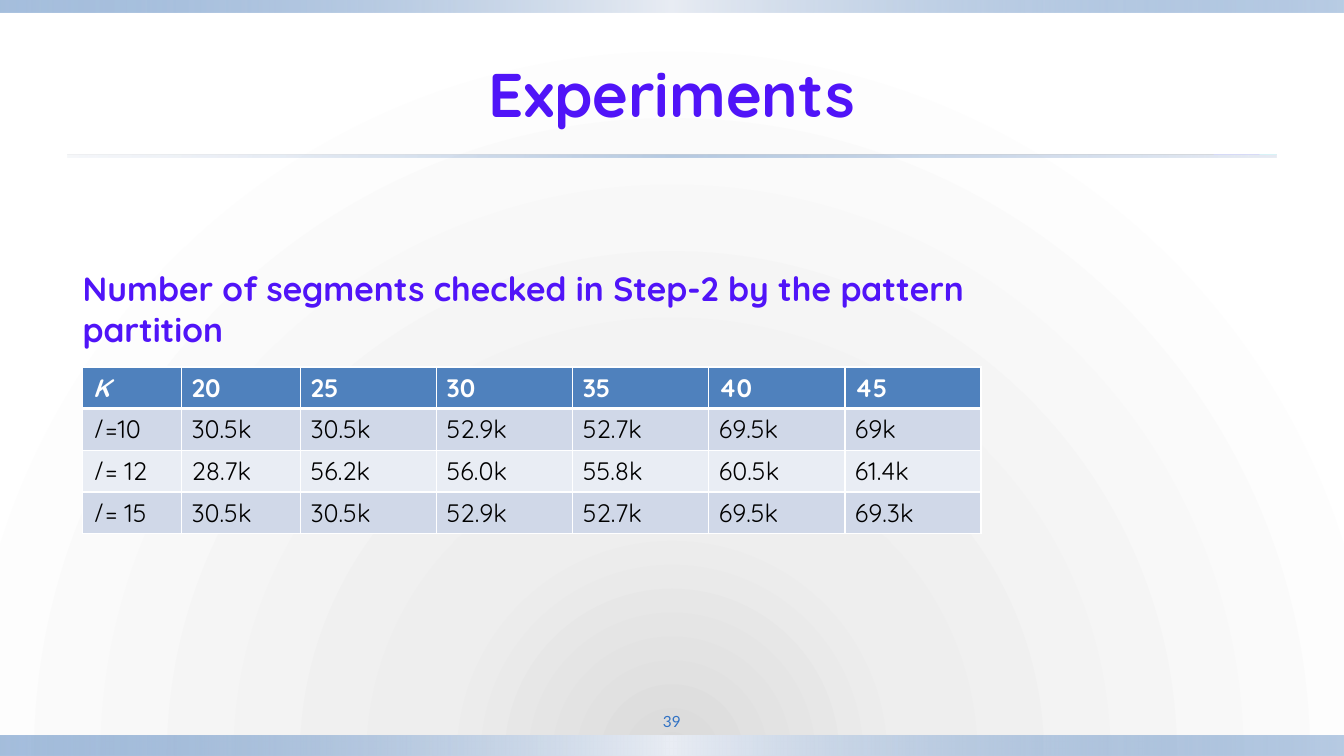
import pptx
import pptx.util
import pptx.dml.color
import pptx.enum.shapes
import pptx.enum.text
import pptx.oxml
import pptx.oxml.ns

C = {"title": "5014F8", "blue": "4F81BD", "band": "D0D8E8", "pale": "E9EDF4",
     "number": "3172C4", "white": "FFFFFF", "black": "000000",
     "grey": "DADADA", "light": "EEEEEE"}
NS = pptx.oxml.ns.nsdecls("a")
PP = pptx.enum.text.PP_ALIGN
MIDDLE = pptx.enum.text.MSO_ANCHOR.MIDDLE
TOP = pptx.enum.text.MSO_ANCHOR.TOP


def write(p, text, size=18, font="Quicksand", color="black", bold=False,
          italic=False, align=None, space=None):
    r = p.add_run()
    r.text = text
    r.font.size = pptx.util.Pt(size)
    r.font.name = font
    r.font.bold, r.font.italic = bold, italic
    r.font.color.rgb = pptx.dml.color.RGBColor.from_string(C[color])
    if align is not None:
        p.alignment = align
    if space is not None:
        p.space_before = p.space_after = pptx.util.Pt(space)


def set_gradient(fill, parent, stops, direction):
    """Replace a gradient fill by (position, colour, opacity) stops."""
    fill.gradient()
    old = parent.find(pptx.oxml.ns.qn("a:gradFill"))
    gs = "".join(f'<a:gs pos="{pos * 1000}"><a:srgbClr val="{C[c]}">'
                 f'<a:alpha val="{a * 1000}"/></a:srgbClr></a:gs>'
                 for pos, c, a in stops)
    parent.replace(old, pptx.oxml.parse_xml(
        f'<a:gradFill {NS} rotWithShape="1"><a:gsLst>{gs}</a:gsLst>'
        f'{direction}</a:gradFill>'))


prs = pptx.Presentation()
prs.slide_width = pptx.util.Inches(13.33)
prs.slide_height = pptx.util.Inches(7.5)
W, H = prs.slide_width, prs.slide_height
s = prs.slides.add_slide(prs.slide_layouts[1])

# Background glow rising from the bottom edge
fill = s.background.fill
fill.gradient()
set_gradient(fill, s.element.cSld.bg.bgPr,
             [(0, "grey", 100), (31, "light", 100), (100, "white", 100)],
             '<a:path path="circle"><a:fillToRect l="50000" t="150000" '
             'r="50000" b="0"/></a:path>')

# Edge bands and title rule: left, top, width, height as shares of the slide
edge = [(0, "blue", 50), (50, "pale", 100), (100, "blue", 40)]
rule = [(0, "band", 20), (50, "blue", 40), (100, "band", 50)]
for x, y, w, h, stops in [(0, 0.973, 1, 0.027, edge),
                          (0, 0, 1, 0.016, edge),
                          (0.05, 0.205, 0.9, 0.003, rule)]:
    sp = s.shapes.add_shape(pptx.enum.shapes.MSO_SHAPE.RECTANGLE,
                            int(x * W), int(y * H), int(w * W), int(h * H))
    sp.shadow.inherit = False
    sp.line.fill.background()
    set_gradient(sp.fill, sp.element.spPr, stops,
                 '<a:lin ang="0" scaled="0"/>')

# Title, table heading and slide number
title, heading = s.placeholders
number = s.shapes.add_textbox(0, 0, 0, 0)
for sp, x, y, w, h, anchor in [
        (title, 0.05, 0.04, 0.9, 0.167, MIDDLE),
        (heading, 0.0255, 0.348, 0.7164, 0.061, TOP),
        (number, 0.45, 0.933, 0.1, 0.041, MIDDLE)]:
    sp.left, sp.top = int(x * W), int(y * H)
    sp.width, sp.height = int(w * W), int(h * H)
    tf = sp.text_frame
    tf.word_wrap = True
    tf.auto_size = pptx.enum.text.MSO_AUTO_SIZE.NONE
    tf.vertical_anchor = anchor

write(title.text_frame.paragraphs[0], "Experiments", size=44, color="title",
      bold=True, align=PP.CENTER, space=6)
p = heading.text_frame.paragraphs[0]
write(p, "Number of segments checked in Step-2 by the pattern partition",
      size=24, color="title", bold=True, align=PP.LEFT, space=6)
pPr = p._p.get_or_add_pPr()
pPr.set("marL", str(pptx.util.Inches(0.38)))
pPr.set("indent", "0")
pPr.append(pptx.oxml.parse_xml(f"<a:buNone {NS}/>"))
tf = number.text_frame
tf.margin_left = tf.margin_right = pptx.util.Inches(0.05)
write(tf.paragraphs[0], "39", size=11, font="Lato", color="number",
      align=PP.CENTER)

# Table of segment counts
rows = [["K", "20", "25", "30", "35", "40", "45"],
        ["=10", "30.5k", "30.5k", "52.9k", "52.7k", "69.5k", "69k"],
        ["= 12", "28.7k", "56.2k", "56.0k", "55.8k", "60.5k", "61.4k"],
        ["= 15", "30.5k", "30.5k", "52.9k", "52.7k", "69.5k", "69.3k"]]
widths = [0.98, 1.18] + [1.35] * 5
row_h = 0.41
frame = s.shapes.add_table(len(rows), len(widths), pptx.util.Inches(0.82),
                           pptx.util.Inches(3.64),
                           pptx.util.Inches(sum(widths)),
                           pptx.util.Inches(row_h * len(rows)))
table = frame.table
for column, width in zip(table.columns, widths):
    column.width = pptx.util.Inches(width)
for i, values in enumerate(rows):
    table.rows[i].height = pptx.util.Inches(row_h)
    for j, value in enumerate(values):
        cell = table.cell(i, j)
        p = cell.text_frame.paragraphs[0]
        if i and j == 0:
            write(p, "l ", italic=True)
        write(p, value, color="black" if i else "white", bold=i == 0,
              italic=i == j == 0)

        # White borders, thicker under the header, come before the fill
        tcPr = cell._tc.get_or_add_tcPr()
        for side in "LRTB":
            thick = (i, side) in [(0, "B"), (1, "T")]
            tcPr.append(pptx.oxml.parse_xml(
                f'<a:ln{side} {NS} w="{pptx.util.Pt(3 if thick else 1)}">'
                f'<a:solidFill><a:srgbClr val="{C["white"]}"/></a:solidFill>'
                f'</a:ln{side}>'))
        cell.fill.solid()
        shade = "blue" if i == 0 else "band" if i % 2 else "pale"
        cell.fill.fore_color.rgb = pptx.dml.color.RGBColor.from_string(C[shade])

prs.save("out.pptx")
